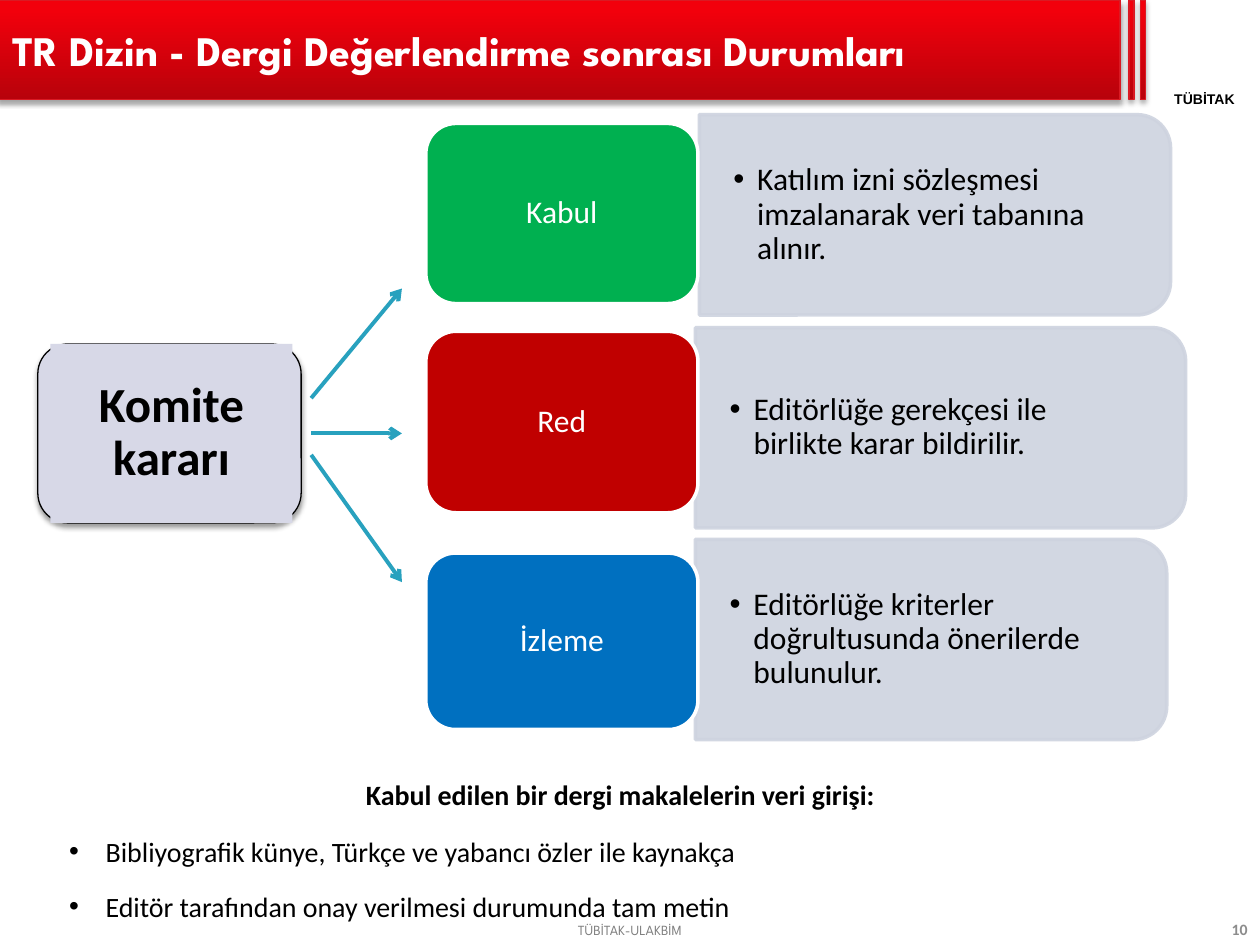
from dataclasses import dataclass

from lxml.etree import SubElement
from pptx import Presentation
from pptx.dml.color import RGBColor
from pptx.enum.shapes import MSO_CONNECTOR as CONN, MSO_SHAPE as SHAPE
from pptx.enum.text import MSO_ANCHOR as ANCHOR, PP_ALIGN as ALIGN
from pptx.oxml.ns import qn
from pptx.util import Inches, Pt

BLACK = RGBColor(0x00, 0x00, 0x00)
WHITE = RGBColor(0xFF, 0xFF, 0xFF)
GREY = RGBColor(0x80, 0x80, 0x80)
PAGE_GREY = RGBColor(0x8C, 0x8C, 0x8C)
DARK_RED = RGBColor(0xB8, 0x02, 0x0B)
BRIGHT_RED = RGBColor(0xF2, 0x00, 0x0C)
EDGE_RED = RGBColor(0xDA, 0x1A, 0x23)
LAVENDER = RGBColor(0xD7, 0xD8, 0xE7)
PANEL = RGBColor(0xCE, 0xD3, 0xDF)
GREEN = RGBColor(0x00, 0xB0, 0x50)
RED = RGBColor(0xC0, 0x00, 0x00)
BLUE = RGBColor(0x00, 0x70, 0xC0)
TEAL = RGBColor(0x28, 0xA1, 0xBE)


@dataclass
class Box:
    left: float
    top: float
    width: float
    height: float

    def emu(self) -> list:
        return [Inches(v) for v in (self.left, self.top, self.width, self.height)]

    def turned(self) -> "Box":
        return Box(self.left + (self.width - self.height) / 2,
                   self.top + (self.height - self.width) / 2,
                   self.height, self.width)


@dataclass
class Outcome:
    label: str
    detail: str
    color: RGBColor
    button: Box
    panel: Box
    text_width: float


@dataclass
class Arrow:
    start_y: float
    end_y: float


OUTCOMES = [
    Outcome("Kabul", "Katılım izni sözleşmesi imzalanarak veri tabanına alınır.", GREEN,
            Box(3.38, 0.98, 2.16, 1.43), Box(5.55, 0.91, 3.74, 1.59), 3.66),
    Outcome("Red", "Editörlüğe gerekçesi ile birlikte karar bildirilir.", RED,
            Box(3.38, 2.63, 2.16, 1.44), Box(5.52, 2.6, 3.89, 1.59), 3.82),
    Outcome("İzleme", "Editörlüğe kriterler doğrultusunda önerilerde bulunulur.", BLUE,
            Box(3.38, 4.39, 2.16, 1.4), Box(5.52, 4.28, 3.74, 1.59), 3.66),
]
ARROWS = [Arrow(3.16, 2.29), Arrow(3.44, 3.44), Arrow(3.61, 4.62)]
BARS = [Box(-0.02, 0, 8.91, 0.79), Box(8.96, 0, 0.04, 0.79), Box(9.05, 0, 0.04, 0.79)]
DATA_ENTRY = ["Bibliyografik künye, Türkçe ve yabancı özler ile kaynakça",
              "Editör tarafından onay verilmesi durumunda tam metin"]


def add_box(slide, box: Box, kind=SHAPE.RECTANGLE, fill=None, line=None, weight=0.75):
    sp = slide.shapes.add_shape(kind, *box.emu())
    sp.shadow.inherit = False
    if fill is not None:
        sp.fill.solid()
        sp.fill.fore_color.rgb = fill
    if line is None:
        sp.line.fill.background()
    else:
        sp.line.color.rgb = line
        sp.line.width = Pt(weight)
    return sp


def add_shadow(sp, alpha: int) -> None:
    effects = sp._element.spPr.find(qn("a:effectLst"))
    shadow = SubElement(effects, qn("a:outerShdw"), blurRad=str(Pt(3.1)),
                        dist=str(Pt(1.8)), dir="5400000", rotWithShape="0")
    color = SubElement(shadow, qn("a:srgbClr"), val="000000")
    SubElement(color, qn("a:alpha"), val=str(alpha * 1000))


def add_bar(slide, box: Box) -> None:
    sp = add_box(slide, box, line=EDGE_RED)
    sp.fill.gradient()
    sp.fill.gradient_angle = 90
    for stop, color, position in zip(sp.fill.gradient_stops, (DARK_RED, BRIGHT_RED), (0, 0.9)):
        stop.color.rgb = color
        stop.position = position
    add_shadow(sp, 35)


def set_text(sp, *lines: str, size: float, color=BLACK, font="Calibri", bold=False,
             align=ALIGN.LEFT, anchor=ANCHOR.MIDDLE, inset=(0.1, 0.05),
             spacing=None, bullet=None, before=0):
    tf = sp.text_frame
    tf.word_wrap = True
    tf.vertical_anchor = anchor
    tf.margin_left = tf.margin_right = Inches(inset[0])
    tf.margin_top = tf.margin_bottom = Inches(inset[1])
    for i, line in enumerate(lines):
        p = tf.add_paragraph() if i else tf.paragraphs[0]
        p.alignment = align
        p.space_before = Pt(before if i else 0)
        if spacing:
            p.line_spacing = spacing
        if bullet:
            margin, hang = bullet
            pPr = p._p.get_or_add_pPr()
            pPr.set("marL", str(Inches(margin)))
            pPr.set("indent", str(-Inches(hang)))
            SubElement(pPr, qn("a:buFont"), typeface="Arial")
            SubElement(pPr, qn("a:buChar"), char="•")
        r = p.add_run()
        r.text = line
        r.font.size = Pt(size)
        r.font.name = font
        r.font.bold = bold
        r.font.color.rgb = color


def add_text(slide, box: Box, *lines: str, **style) -> None:
    set_text(slide.shapes.add_textbox(*box.emu()), *lines, **style)


def add_outcome(slide, item: Outcome) -> None:
    panel = add_box(slide, item.panel.turned(), SHAPE.ROUND_2_SAME_RECTANGLE, PANEL, PANEL, 2)
    panel.rotation = 90
    for color in panel._element.spPr.iter(qn("a:srgbClr")):
        SubElement(color, qn("a:alpha"), val="90000")
    add_text(slide, Box(item.panel.left, item.panel.top + 0.08, item.text_width, 1.43),
             item.detail, size=18, inset=(0.27, 0.14), spacing=0.9, bullet=(0.19, 0.19))
    button = add_box(slide, item.button, SHAPE.ROUNDED_RECTANGLE, item.color, WHITE, 2)
    set_text(button, item.label, size=18, color=WHITE, align=ALIGN.CENTER,
             inset=(0.07, 0.04), spacing=0.9)


def add_arrow(slide, arrow: Arrow) -> None:
    cx = slide.shapes.add_connector(CONN.STRAIGHT, Inches(2.47), Inches(arrow.start_y),
                                    Inches(3.19), Inches(arrow.end_y))
    cx.line.color.rgb = TEAL
    cx.line.width = Pt(2.25)
    SubElement(cx.line._get_or_add_ln(), qn("a:tailEnd"), type="arrow")
    SubElement(cx._element.spPr, qn("a:effectLst"))


def main() -> None:
    prs = Presentation()
    prs.slide_width, prs.slide_height = Inches(10), Inches(7.5)
    s = prs.slides.add_slide(prs.slide_layouts[6])

    for bar in BARS:
        add_bar(s, bar)
    add_text(s, Box(9.05, 0.72, 1.02, 0.13), "TÜBİTAK", size=8, font="Arial", bold=True,
             align=ALIGN.CENTER, anchor=ANCHOR.TOP, inset=(0, 0))
    add_text(s, Box(0, 7.26, 10, 0.24), "TÜBİTAK-ULAKBİM", size=8, color=GREY,
             font="League Spartan", align=ALIGN.CENTER)
    add_text(s, Box(7.68, 7.25, 2.32, 0.25), "10", size=9, color=PAGE_GREY, bold=True,
             align=ALIGN.RIGHT)
    add_text(s, Box(0, 0.01, 8.94, 0.77), "TR Dizin - Dergi Değerlendirme sonrası Durumları",
             size=24, color=WHITE, font="League Spartan", bold=True)

    add_text(s, Box(0.2, 6.12, 9.45, 0.37), "Kabul edilen bir dergi makalelerin veri girişi:",
             size=16, bold=True, align=ALIGN.CENTER, anchor=ANCHOR.TOP)
    add_text(s, Box(0.2, 6.57, 9.45, 0.81), *DATA_ENTRY, size=16, anchor=ANCHOR.TOP,
             bullet=(0.54, 0.29), before=12.5)

    card = add_box(s, Box(0.3, 2.73, 2.09, 1.42), SHAPE.ROUNDED_RECTANGLE, LAVENDER, BLACK)
    add_shadow(card, 38)
    decision = add_box(s, Box(0.4, 2.73, 1.92, 1.42), fill=LAVENDER)
    set_text(decision, "Komite kararı", size=28, bold=True, align=ALIGN.CENTER,
             inset=(0.07, 0.07), spacing=0.9)

    for item in OUTCOMES:
        add_outcome(s, item)
    for arrow in ARROWS:
        add_arrow(s, arrow)

    prs.save("out.pptx")


if __name__ == "__main__":
    main()
